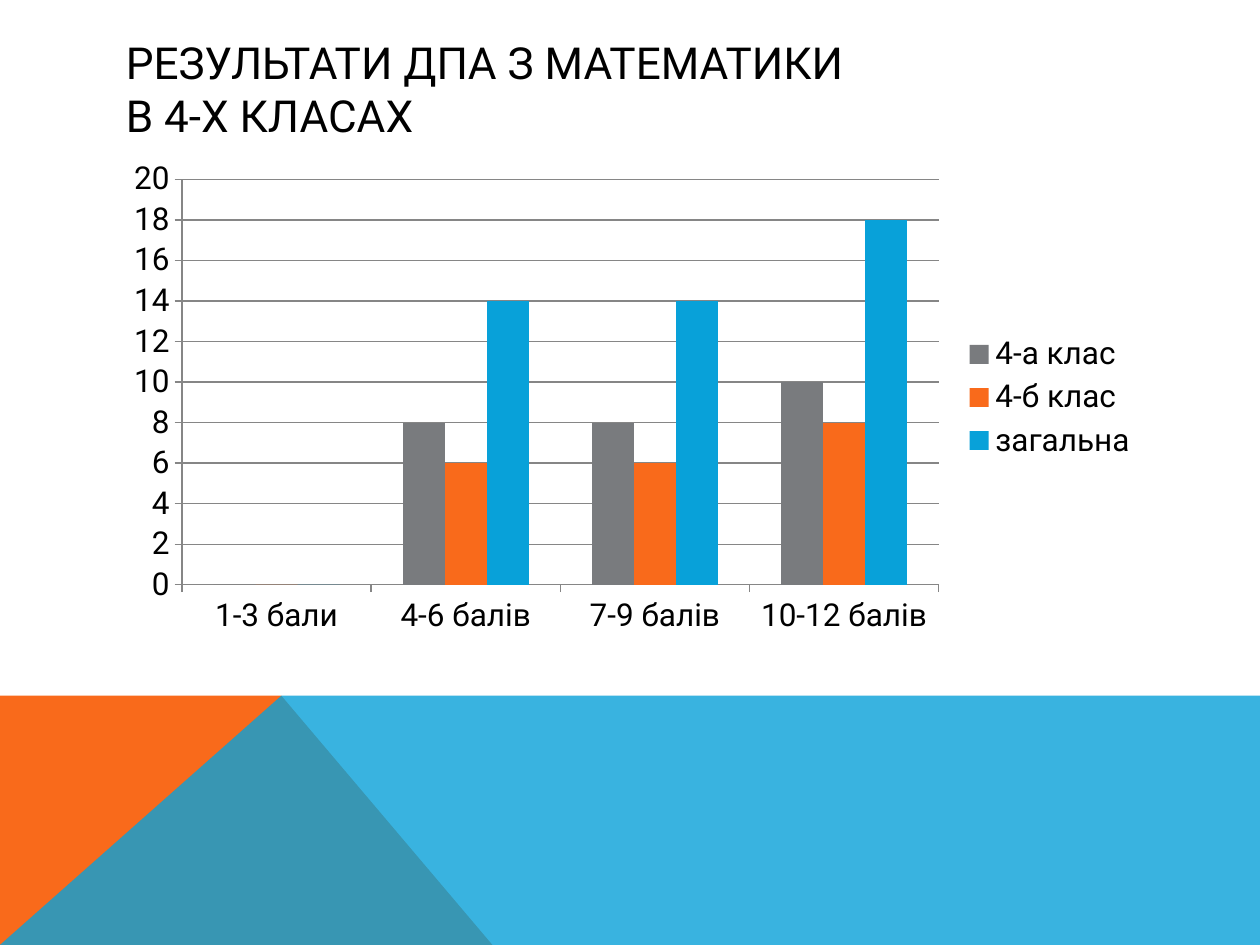
from dataclasses import dataclass
from typing import Optional

from lxml import etree
from pptx import Presentation
from pptx.chart.data import CategoryChartData
from pptx.dml.color import RGBColor
from pptx.enum import chart as ch, text
from pptx.oxml.ns import qn
from pptx.util import Pt


@dataclass(frozen=True)
class Theme:
    font: str = "Roboto"
    title_size: float = 25.2
    chart_size: float = 18
    ink: str = "000000"
    grey: str = "797B7E"
    orange: str = "F96A1B"
    blue: str = "08A1D9"
    axis: str = "868686"


@dataclass(frozen=True)
class Band:
    points: tuple[tuple[float, float], ...]
    color: str
    opacity: Optional[int] = None  # percent


@dataclass(frozen=True)
class Series:
    name: str
    values: tuple[int, ...]
    color: str


THEME = Theme()
WIDTH, HEIGHT = 720, 540
BAND_TOP, PEAK_X, FOOT_X = 397.6, 160.8, 281.4
LEFT = 64.8

BANDS = (
    Band(((0, HEIGHT), (0, BAND_TOP), (PEAK_X, BAND_TOP), (FOOT_X, HEIGHT)), THEME.orange),
    Band(((0, HEIGHT), (PEAK_X, BAND_TOP), (WIDTH, BAND_TOP), (WIDTH, HEIGHT)), THEME.blue, 80),
)
SCORES = ("1-3 бали", "4-6 балів", "7-9 балів", "10-12 балів")
RESULTS = (
    Series("4-а клас", (0, 8, 8, 10), THEME.grey),
    Series("4-б клас", (0, 6, 6, 8), THEME.orange),
    Series("загальна", (0, 14, 14, 18), THEME.blue),
)


def rgb(color: str) -> RGBColor:
    return RGBColor.from_string(color)


def style_font(font, *, size: float, color: str) -> None:
    font.name = THEME.font
    font.size = Pt(size)
    font.bold = False
    font.color.rgb = rgb(color)


def add_text(slide, content: str, *, left: float, top: float, width: float,
             height: float, size: float, color: str) -> None:
    frame = slide.shapes.add_textbox(Pt(left), Pt(top), Pt(width), Pt(height)).text_frame
    frame.word_wrap = True
    frame.vertical_anchor = text.MSO_ANCHOR.MIDDLE
    paragraph = frame.paragraphs[0]
    for index, line in enumerate(content.split("\n")):
        if index:
            paragraph.add_line_break()
        run = paragraph.add_run()
        run.text = line
        style_font(run.font, size=size, color=color)


def add_band(slide, band: Band) -> None:
    start, *rest = [(Pt(x), Pt(y)) for x, y in band.points]
    builder = slide.shapes.build_freeform(*start)
    builder.add_line_segments(rest, close=True)
    shape = builder.convert_to_shape()
    shape.shadow.inherit = False
    shape.line.fill.background()
    shape.fill.solid()
    shape.fill.fore_color.rgb = rgb(band.color)
    if band.opacity is not None:
        color = shape.element.spPr.find(qn("a:solidFill"))[0]
        etree.SubElement(color, qn("a:alpha")).set("val", str(band.opacity * 1000))


def style_line(line) -> None:
    line.color.rgb = rgb(THEME.axis)
    line.width = Pt(0.75)


def add_results_chart(slide, *, left: float, top: float, width: float, height: float) -> None:
    data = CategoryChartData()
    data.categories = SCORES
    for result in RESULTS:
        data.add_series(result.name, result.values)
    chart = slide.shapes.add_chart(ch.XL_CHART_TYPE.COLUMN_CLUSTERED, Pt(left), Pt(top),
                                   Pt(width), Pt(height), data).chart
    style_font(chart.font, size=THEME.chart_size, color=THEME.ink)
    chart.has_title = False
    chart.has_legend = True
    chart.legend.position = ch.XL_LEGEND_POSITION.RIGHT
    chart.legend.include_in_layout = False

    plot = chart.plots[0]
    plot.gap_width = 150
    plot.overlap = 0
    plot.vary_by_categories = False
    for series, result in zip(plot.series, RESULTS):
        series.format.fill.solid()
        series.format.fill.fore_color.rgb = rgb(result.color)

    for axis in (chart.category_axis, chart.value_axis):
        axis.major_tick_mark = ch.XL_TICK_MARK.OUTSIDE
        style_line(axis.format.line)
    scale = chart.value_axis
    scale.minimum_scale, scale.maximum_scale, scale.major_unit = 0, 20, 2
    scale.has_major_gridlines = True
    style_line(scale.major_gridlines.format.line)


def main() -> None:
    deck = Presentation()
    deck.slide_width, deck.slide_height = Pt(WIDTH), Pt(HEIGHT)
    slide = deck.slides.add_slide(deck.slide_layouts[6])
    for band in BANDS:
        add_band(slide, band)
    add_text(slide, "РЕЗУЛЬТАТИ ДПА З МАТЕМАТИКИ\nВ 4-Х КЛАСАХ", left=LEFT, top=28.8,
             width=592, height=43.2, size=THEME.title_size, color=THEME.ink)
    add_results_chart(slide, left=LEFT, top=86.4, width=592.6, height=281.5)
    deck.save("out.pptx")


if __name__ == "__main__":
    main()
